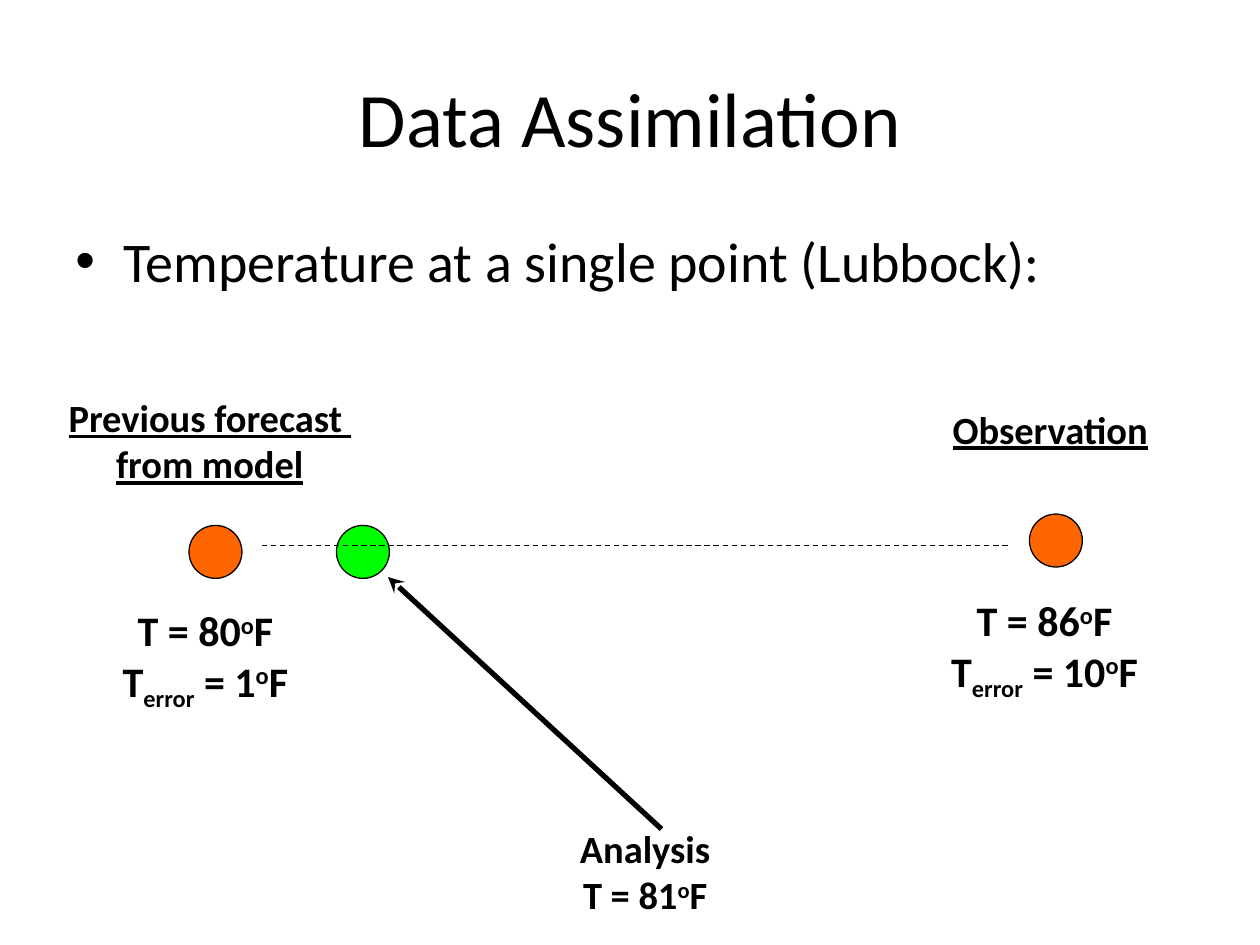
from lxml.etree import SubElement
from pptx import Presentation
from pptx.dml.color import RGBColor
from pptx.enum.dml import MSO_LINE_DASH_STYLE as Dash
from pptx.enum.shapes import MSO_CONNECTOR as Connector, MSO_SHAPE as Shape
from pptx.enum.text import MSO_ANCHOR as Anchor, PP_ALIGN as Align
from pptx.oxml.ns import qn
from pptx.util import Inches, Pt

COLORS = {"ink": "000000", "known": "FF6600", "analysis": "00FF00"}
FONT = "Calibri"
DOT_SIZE = 0.42
SUPER, SUB = 30, -25
DEGREES_F = [("o", SUPER), ("F", 0)]


def color(name):
    return RGBColor.from_string(COLORS[name])


def temperature(value):
    return [(f"T = {value}", 0), *DEGREES_F]


def error(value):
    return [("T", 0), ("error", SUB), (f" = {value}", 0), *DEGREES_F]


def add_text(page, place, lines, size, align=Align.CENTER, anchor=Anchor.TOP,
             bullet=None, **style):
    """Each line is a list of (text, baseline shift) pairs."""
    box = page.shapes.add_textbox(*map(Inches, place))
    frame = box.text_frame
    frame.word_wrap = True
    frame.vertical_anchor = anchor
    for index, line in enumerate(lines):
        para = frame.paragraphs[0] if index == 0 else frame.add_paragraph()
        para.alignment = align
        if bullet:
            add_bullet(para, bullet)
        for text, shift in line:
            span = para.add_run()
            span.text = text
            span.font.color.rgb = color("ink")
            for key, value in {"name": FONT, "size": Pt(size), **style}.items():
                setattr(span.font, key, value)
            if shift:
                span.font._element.set("baseline", str(shift * 1000))


def add_bullet(para, mark):
    props = para._p.get_or_add_pPr()
    props.set("marL", str(Inches(0.38)))
    props.set("indent", str(-Inches(0.38)))
    SubElement(props, qn("a:buFont"), typeface="Arial")
    SubElement(props, qn("a:buChar"), char=mark)


def add_dot(page, left, top, fill):
    dot = page.shapes.add_shape(
        Shape.OVAL, *map(Inches, (left, top, DOT_SIZE, DOT_SIZE)))
    dot.shadow.inherit = False
    dot.fill.solid()
    dot.fill.fore_color.rgb = color(fill)
    dot.line.color.rgb = color("ink")
    dot.line.width = Pt(0.75)


def add_line(page, start, end, width, dash=None, arrow=None):
    line = page.shapes.add_connector(
        Connector.STRAIGHT, *map(Inches, (*start, *end)))
    line.line.color.rgb = color("ink")
    line.line.width = Pt(width)
    if dash:
        line.line.dash_style = dash
    if arrow:
        SubElement(line.line._get_or_add_ln(), qn("a:tailEnd"), type=arrow)
    SubElement(line._element.spPr, qn("a:effectLst"))


def main():
    deck = Presentation()
    deck.slide_width, deck.slide_height = Inches(10), Inches(7.5)
    page = deck.slides.add_slide(deck.slide_layouts[6])

    # Title and topic
    add_text(page, (0.5, 0.3, 9, 1.25), [[("Data Assimilation", 0)]], 44,
             anchor=Anchor.MIDDLE)
    add_text(page, (0.5, 1.75, 9, 4.95),
             [[("Temperature at a single point (Lubbock):", 0)]], 32,
             align=Align.LEFT, bullet="•")

    # Forecast and observation, with their values
    add_dot(page, 1.5, 4.17, "known")
    add_dot(page, 8.17, 4.08, "known")
    add_text(page, (0.42, 4.75, 2.42, 0.91),
             [temperature(80), error(1)], 24, bold=True)
    add_text(page, (7.08, 4.67, 2.42, 0.91),
             [temperature(86), error(10)], 24, bold=True)
    heading = {"size": 22, "bold": True, "underline": True}
    add_text(page, (0, 3.08, 3.33, 0.83),
             [[("Previous forecast ", 0)], [("from model", 0)]], **heading)
    add_text(page, (6.67, 3.17, 3.33, 0.47), [[("Observation", 0)]], **heading)

    # Analysis between the two
    add_dot(page, 2.67, 4.17, "analysis")
    add_line(page, (2.08, 4.33), (8, 4.33), 0.75, dash=Dash.DASH)
    add_text(page, (4.08, 6.5, 2.08, 0.83),
             [[("Analysis", 0)], temperature(81)], 22, bold=True)
    add_line(page, (5.25, 6.58), (3.08, 4.58), 3, arrow="stealth")

    deck.save("out.pptx")


if __name__ == "__main__":
    main()
